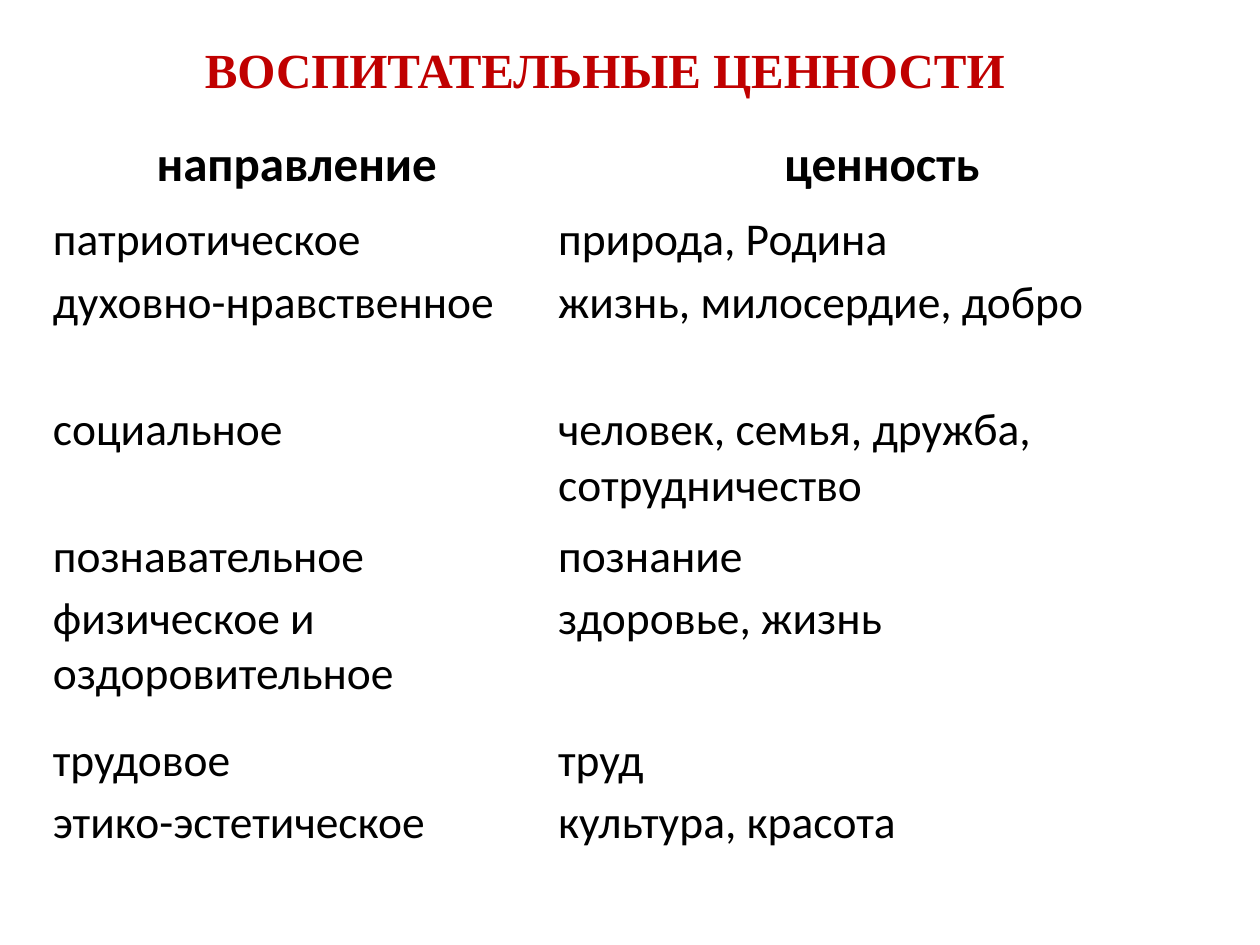
from dataclasses import dataclass

from lxml import etree
from pptx import Presentation
from pptx.dml.color import RGBColor
from pptx.enum.text import MSO_ANCHOR, PP_ALIGN
from pptx.oxml.ns import qn
from pptx.util import Inches, Pt

MIDDLE = MSO_ANCHOR.MIDDLE
TOP = MSO_ANCHOR.TOP
CENTER = PP_ALIGN.CENTER
LEFT = PP_ALIGN.LEFT
TITLE_ONLY = 5


@dataclass(frozen=True)
class Theme:
    title_font: str = "Times New Roman"
    body_font: str = "Calibri"
    title_color: str = "C00000"
    text_color: str = "000000"
    border_color: str = "FFFFFF"
    heading_size: int = 28
    body_size: int = 26
    border_width: int = 1
    header_border_width: int = 3


THEME = Theme()

TITLE = "ВОСПИТАТЕЛЬНЫЕ ЦЕННОСТИ"
VALUES = [
    ("направление", "ценность"),
    ("патриотическое", "природа, Родина"),
    ("духовно-нравственное", "жизнь, милосердие, добро"),
    ("социальное", "человек, семья, дружба, сотрудничество"),
    ("познавательное", "познание"),
    ("физическое и оздоровительное", "здоровье, жизнь"),
    ("трудовое", "труд"),
    ("этико-эстетическое", "культура, красота"),
]
COLUMN_WIDTHS = [4.01, 5.28]
ROW_HEIGHTS = [0.61, 0.5, 1.01, 1.01, 0.49, 1.13, 0.49, 0.75]


def add_text(paragraph, text, font_name, size, color, bold, alignment):
    paragraph.alignment = alignment
    run = paragraph.add_run()
    run.text = text
    run.font.name = font_name
    run.font.size = Pt(size)
    run.font.bold = bold
    run.font.color.rgb = RGBColor.from_string(color)


def set_borders(cell, bottom_width):
    properties = cell._tc.get_or_add_tcPr()
    widths = {
        "a:lnL": THEME.border_width,
        "a:lnR": THEME.border_width,
        "a:lnT": THEME.border_width,
        "a:lnB": bottom_width,
    }
    for index, (side, width) in enumerate(widths.items()):
        line = etree.Element(qn(side), w=str(Pt(width)))
        fill = etree.SubElement(line, qn("a:solidFill"))
        etree.SubElement(fill, qn("a:srgbClr"), val=THEME.border_color)
        properties.insert(index, line)


def place_title(slide, left, top, width, height):
    title = slide.shapes.title
    title.left, title.top = left, top
    title.width, title.height = width, height
    frame = title.text_frame
    frame.word_wrap = True
    frame.vertical_anchor = MIDDLE
    frame.margin_right = Inches(0.2)
    frame.margin_bottom = Inches(0.48)
    add_text(frame.paragraphs[0], TITLE, THEME.title_font, THEME.heading_size,
             THEME.title_color, True, CENTER)


def fill_cell(cell, text, is_header):
    cell.margin_left = cell.margin_right = Inches(0.07)
    cell.margin_top = cell.margin_bottom = 0
    cell.vertical_anchor = TOP
    cell.fill.background()
    set_borders(cell, THEME.header_border_width if is_header else THEME.border_width)
    size = THEME.heading_size if is_header else THEME.body_size
    add_text(cell.text_frame.paragraphs[0], text, THEME.body_font, size,
             THEME.text_color, is_header, CENTER if is_header else LEFT)


def place_values_table(slide, left, top, width, height):
    table = slide.shapes.add_table(len(VALUES), len(COLUMN_WIDTHS),
                                   left, top, width, height).table
    table.horz_banding = False
    for column, share in zip(table.columns, COLUMN_WIDTHS):
        column.width = int(width * share / sum(COLUMN_WIDTHS))
    for row, share in zip(table.rows, ROW_HEIGHTS):
        row.height = int(height * share / sum(ROW_HEIGHTS))
    for row_index, texts in enumerate(VALUES):
        for column_index, text in enumerate(texts):
            fill_cell(table.cell(row_index, column_index), text, row_index == 0)


def main():
    presentation = Presentation()
    presentation.slide_width = Inches(10)
    presentation.slide_height = Inches(7.5)
    slide = presentation.slides.add_slide(presentation.slide_layouts[TITLE_ONLY])
    place_title(slide, Inches(0.35), Inches(0.14), Inches(9), Inches(1.25))
    place_values_table(slide, Inches(0.35), Inches(1.07), Inches(9.29), Inches(5.99))
    presentation.save("out.pptx")


if __name__ == "__main__":
    main()
